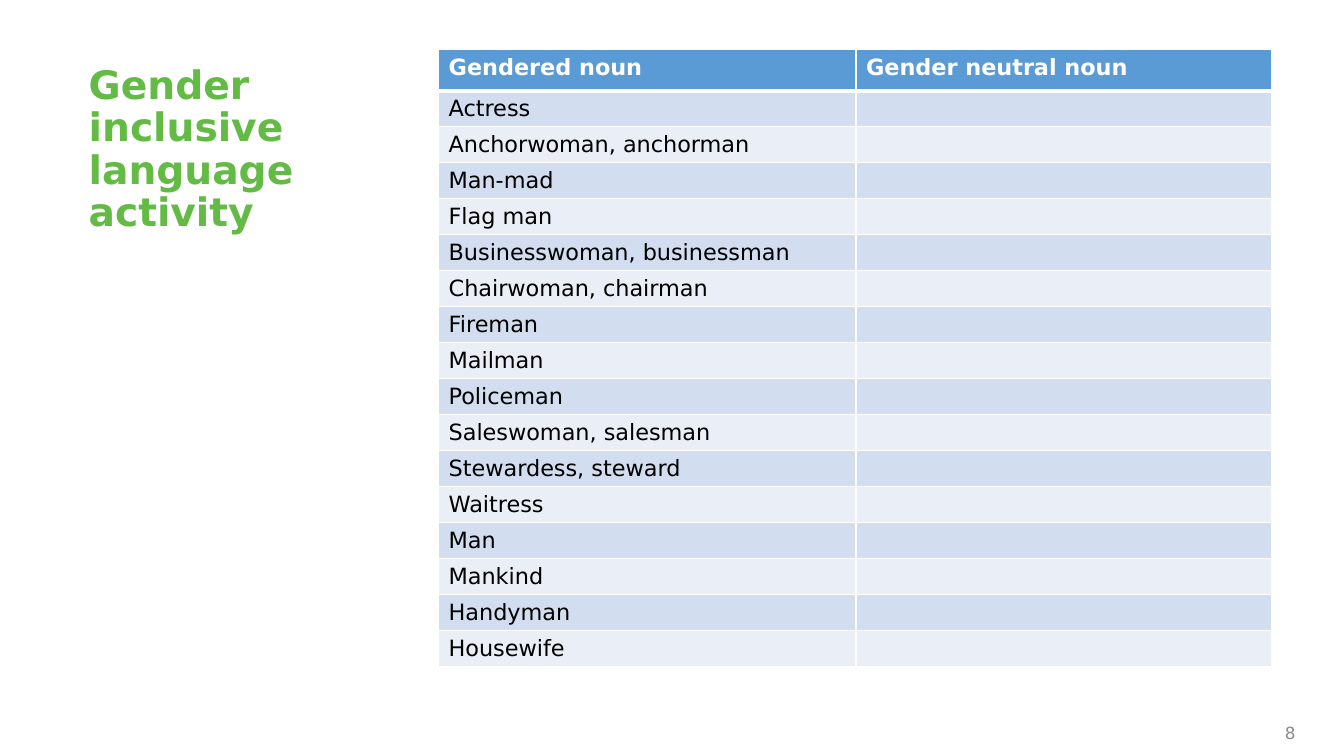
from dataclasses import dataclass

from lxml import etree
from pptx import Presentation
from pptx.dml.color import RGBColor
from pptx.enum.text import MSO_ANCHOR, MSO_AUTO_SIZE, PP_ALIGN
from pptx.oxml.ns import qn
from pptx.util import Inches, Pt

LEFT, RIGHT = PP_ALIGN.LEFT, PP_ALIGN.RIGHT
MIDDLE, BOTTOM = MSO_ANCHOR.MIDDLE, MSO_ANCHOR.BOTTOM
NO_AUTOFIT = MSO_AUTO_SIZE.NONE
TITLE_ONLY = 5

HEADINGS = ["Gendered noun", "Gender neutral noun"]
GENDERED_NOUNS = [
    "Actress", "Anchorwoman, anchorman", "Man-mad", "Flag man",
    "Businesswoman, businessman", "Chairwoman, chairman", "Fireman",
    "Mailman", "Policeman", "Saleswoman, salesman", "Stewardess, steward",
    "Waitress", "Man", "Mankind", "Handyman", "Housewife",
]


@dataclass(frozen=True)
class Theme:
    font: str = "DejaVu Sans"
    title_color: str = "63BB46"
    number_color: str = "8C8C8C"
    heading_color: str = "FFFFFF"
    text_color: str = "000000"
    heading_fill: str = "5B9BD5"
    band_fills: tuple = ("D2DEEF", "EAEFF7")
    border_color: str = "FFFFFF"
    title_size: int = 28
    table_size: int = 16
    number_size: int = 12


class SlideBuilder:
    def __init__(self, slide, theme):
        self.slide = slide
        self.theme = theme

    def style_font(self, paragraph, size, color, bold=False):
        font = paragraph.font
        font.name, font.size, font.bold = self.theme.font, Pt(size), bold
        font.color.rgb = RGBColor.from_string(color)

    def set_text(self, shape, text, size, color, alignment, anchor, bold=False):
        frame = shape.text_frame
        frame.text = text
        frame.word_wrap = True
        frame.auto_size = NO_AUTOFIT
        frame.vertical_anchor = anchor
        frame.margin_left = frame.margin_right = 0
        frame.margin_top = frame.margin_bottom = 0
        paragraph = frame.paragraphs[0]
        paragraph.alignment = alignment
        self.style_font(paragraph, size, color, bold)
        return paragraph

    def title(self, text, left, top, width, height):
        shape = self.slide.shapes.title
        shape.left, shape.top = Inches(left), Inches(top)
        shape.width, shape.height = Inches(width), Inches(height)
        paragraph = self.set_text(shape, text, self.theme.title_size,
                                  self.theme.title_color, LEFT, MIDDLE, bold=True)
        paragraph.line_spacing = 0.9

    def page_number(self, text, left, top, width, height):
        box = self.slide.shapes.add_textbox(
            Inches(left), Inches(top), Inches(width), Inches(height))
        self.set_text(box, text, self.theme.number_size,
                      self.theme.number_color, RIGHT, BOTTOM)

    def cell_borders(self, cell, top, bottom):
        properties = cell._tc.get_or_add_tcPr()
        sides = {"a:lnL": 1, "a:lnR": 1, "a:lnT": top, "a:lnB": bottom}
        for position, (tag, points) in enumerate(sides.items()):
            line = etree.Element(qn(tag), w=str(Pt(points)))
            fill = etree.SubElement(line, qn("a:solidFill"))
            etree.SubElement(fill, qn("a:srgbClr"), val=self.theme.border_color)
            properties.insert(position, line)

    def cell(self, cell, text, row):
        theme = self.theme
        heading = row == 0
        fill = theme.heading_fill if heading else theme.band_fills[(row - 1) % 2]
        cell.fill.solid()
        cell.fill.fore_color.rgb = RGBColor.from_string(fill)
        self.cell_borders(cell, 3 if row == 1 else 1, 3 if heading else 1)
        paragraph = cell.text_frame.paragraphs[0]
        if text:
            paragraph.text = text
        else:
            # Empty cells take their line height from the end mark
            end_mark = etree.SubElement(paragraph._p, qn("a:endParaRPr"),
                                        sz=str(theme.table_size * 100))
            etree.SubElement(end_mark, qn("a:latin"), typeface=theme.font)
        self.style_font(paragraph, theme.table_size,
                        theme.heading_color if heading else theme.text_color,
                        bold=heading)

    def table(self, rows, left, top, height, column_widths,
              heading_height, row_height):
        frame = self.slide.shapes.add_table(
            len(rows), len(column_widths), Inches(left), Inches(top),
            Inches(sum(column_widths)), Inches(height))
        table = frame.table
        for column, width in zip(table.columns, column_widths):
            column.width = Inches(width)
        for index, texts in enumerate(rows):
            table.rows[index].height = Inches(row_height if index else heading_height)
            for column, text in enumerate(texts):
                self.cell(table.cell(index, column), text, index)
        frame.height = Inches(height)


def main():
    presentation = Presentation()
    presentation.slide_width = Inches(13.33)
    presentation.slide_height = Inches(7.5)
    slide = presentation.slides.add_slide(presentation.slide_layouts[TITLE_ONLY])
    builder = SlideBuilder(slide, Theme())

    # Title and page number
    builder.title("Gender inclusive language activity", 0.88, 0.49, 2.9, 2)
    builder.page_number("8", 9.85, 6.97, 3, 0.4)

    # Activity table with an empty answer column
    rows = [HEADINGS] + [[noun, ""] for noun in GENDERED_NOUNS]
    builder.table(rows, 4.35, 0.49, 6.28, column_widths=[4.14, 4.12],
                  heading_height=0.41, row_height=0.29)

    presentation.save("out.pptx")


if __name__ == "__main__":
    main()
